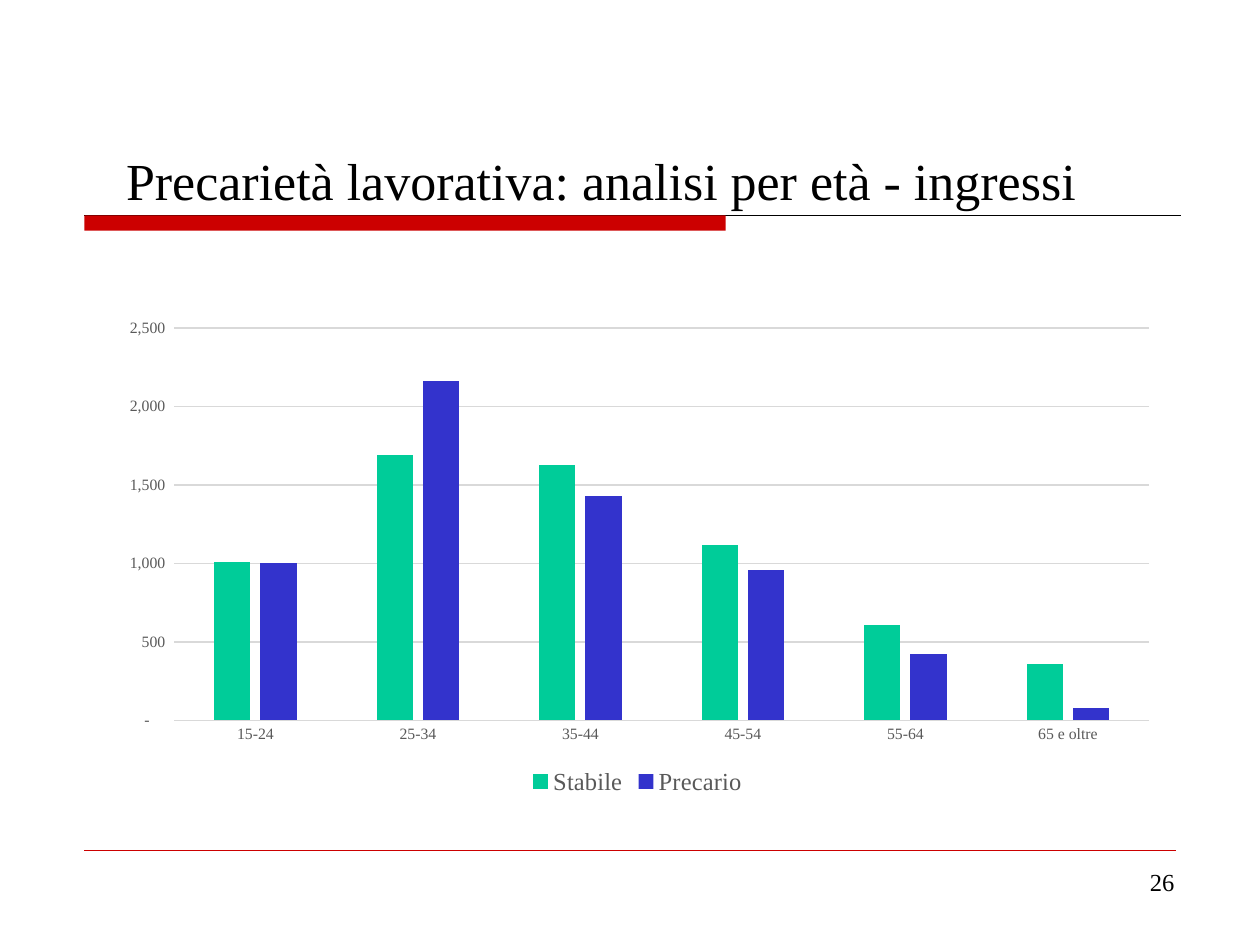
from dataclasses import dataclass

from lxml import etree
from pptx import Presentation
from pptx import util as u
from pptx.chart.data import CategoryChartData
from pptx.dml.color import RGBColor
from pptx.enum import chart as ch
from pptx.enum import shapes, text
from pptx.oxml.ns import qn

W, H = u.Inches(10), u.Inches(7.5)
FONT = "Times New Roman"
RED, BLACK, GREY, GRID = "CC0000", "000000", "595959", "D9D9D9"
NUMBERS = '_-* #,##0_-;\\-* #,##0_-;_-* "-"??_-;_-@_'


@dataclass
class Box:
    x: float
    y: float
    w: float
    h: float

    def emu(self) -> tuple:
        return int(self.x * W), int(self.y * H), int(self.w * W), int(self.h * H)


@dataclass
class Rule:
    x1: float
    x2: float
    y: float
    color: str
    width: float


@dataclass
class Series:
    name: str
    values: tuple
    color: str


TITLE = Box(0.09, 0.09, 0.825, 0.14)
BAR = Box(0.067, 0.228, 0.509, 0.016)
CHART = Box(0.083, 0.327, 0.846, 0.52)
NUMBER = Box(0.791, 0.911, 0.151, 0.069)
RULES = [Rule(0.067, 0.937, 0.228, BLACK, 0.75),
         Rule(0.067, 0.933, 0.9, RED, 0.25)]
AGES = ["15-24", "25-34", "35-44", "45-54", "55-64", "65 e oltre"]
SERIES = [Series("Stabile", (1010, 1690, 1630, 1120, 610, 360), "00CC99"),
          Series("Precario", (1000, 2160, 1430, 960, 420, 80), "3333CC")]


def rgb(value: str) -> RGBColor:
    return RGBColor.from_string(value)


def style(font, size: float, color: str) -> None:
    font.name, font.size, font.bold = FONT, u.Pt(size), False
    font.color.rgb = rgb(color)


def stroke(line, color: str, width: float) -> None:
    line.color.rgb = rgb(color)
    line.width = u.Pt(width)


def write(sp, words: str, size: float, align, anchor) -> None:
    tf = sp.text_frame
    tf.text = words
    tf.word_wrap = True
    tf.auto_size = text.MSO_AUTO_SIZE.NONE
    tf.vertical_anchor = anchor
    p = tf.paragraphs[0]
    p.alignment = align
    style(p.runs[0].font, size, BLACK)


def draw_rule(s, rule: Rule) -> None:
    y = int(rule.y * H)
    line = s.shapes.add_connector(shapes.MSO_CONNECTOR.STRAIGHT,
                                  int(rule.x1 * W), y, int(rule.x2 * W), y)
    stroke(line.line, rule.color, rule.width)
    etree.SubElement(line._element.spPr, qn("a:effectLst"))


def draw_bar(s, box: Box) -> None:
    sp = s.shapes.add_shape(shapes.MSO_SHAPE.RECTANGLE, *box.emu())
    sp.shadow.inherit = False
    sp.fill.solid()
    sp.fill.fore_color.rgb = rgb(RED)
    sp.line.fill.background()


def draw_chart(s, box: Box) -> None:
    data = CategoryChartData(number_format=NUMBERS)
    data.categories = AGES
    for series in SERIES:
        data.add_series(series.name, series.values)
    chart = s.shapes.add_chart(ch.XL_CHART_TYPE.COLUMN_CLUSTERED,
                               *box.emu(), data).chart
    style(chart.font, 10, BLACK)
    chart.has_title = False
    chart.has_legend = True
    chart.legend.position = ch.XL_LEGEND_POSITION.BOTTOM
    chart.legend.include_in_layout = False
    style(chart.legend.font, 14, GREY)

    plot = chart.plots[0]
    plot.gap_width, plot.overlap = 219, -27
    plot.vary_by_categories = False
    for drawn, series in zip(plot.series, SERIES):
        drawn.invert_if_negative = False
        drawn.format.fill.solid()
        drawn.format.fill.fore_color.rgb = rgb(series.color)

    ages, counts = chart.category_axis, chart.value_axis
    for axis in (ages, counts):
        axis.major_tick_mark = axis.minor_tick_mark = ch.XL_TICK_MARK.NONE
        style(axis.tick_labels.font, 9, GREY)
    stroke(ages.format.line, GRID, 0.75)
    counts.format.line.fill.background()
    counts.minimum_scale, counts.maximum_scale, counts.major_unit = 0, 2500, 500
    counts.has_major_gridlines = True
    stroke(counts.major_gridlines.format.line, GRID, 0.75)
    counts.tick_labels.number_format = NUMBERS
    counts.tick_labels.number_format_is_linked = False


def main() -> None:
    prs = Presentation()
    prs.slide_width, prs.slide_height = W, H
    s = prs.slides.add_slide(prs.slide_layouts[5])
    for rule in RULES:
        draw_rule(s, rule)
    draw_bar(s, BAR)
    title = s.shapes.title
    title.left, title.top, title.width, title.height = TITLE.emu()
    write(title, "Precarietà lavorativa: analisi per età - ingressi", 29.7,
          text.PP_ALIGN.LEFT, text.MSO_ANCHOR.BOTTOM)
    write(s.shapes.add_textbox(*NUMBER.emu()), "26", 14,
          text.PP_ALIGN.RIGHT, text.MSO_ANCHOR.TOP)
    draw_chart(s, CHART)
    prs.save("out.pptx")


if __name__ == "__main__":
    main()
